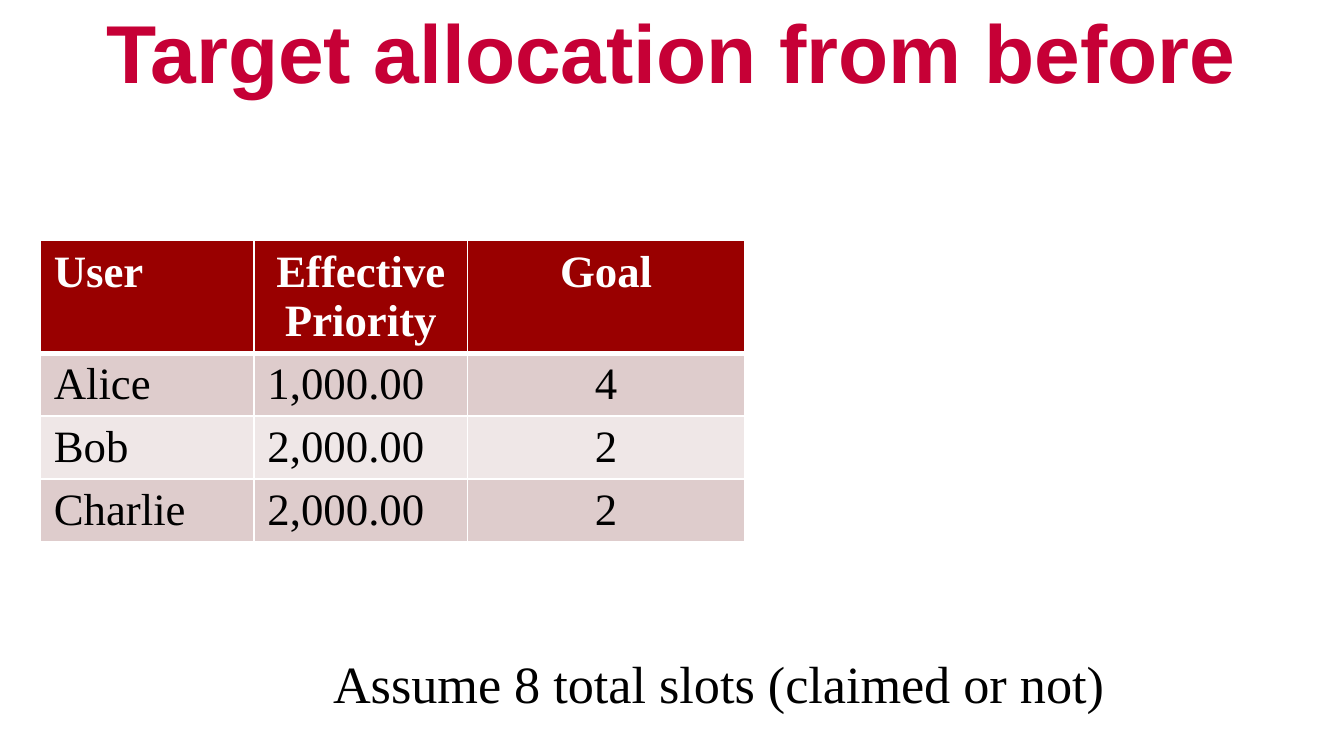
from dataclasses import dataclass

from lxml import etree
from pptx import Presentation
from pptx import util as u
from pptx.dml.color import RGBColor
from pptx.enum import text as t
from pptx.oxml import ns


@dataclass(frozen=True)
class Theme:
    heading_font: str = "Arial"
    body_font: str = "Times New Roman"
    heading: str = "C60036"
    ink: str = "000000"
    white: str = "FFFFFF"
    header_fill: str = "990000"
    bands: tuple = ("DECCCC", "EFE7E7")
    title_size: int = 44
    note_size: int = 28
    table_size: int = 24
    rule: int = 1
    header_rule: int = 3


LEFT, CENTER = t.PP_ALIGN.LEFT, t.PP_ALIGN.CENTER


def write(frame, content, *, font, size, color, bold=False, align=LEFT):
    """Fill a text frame, one paragraph per line of content."""
    for i, line in enumerate(content.split("\n")):
        paragraph = frame.add_paragraph() if i else frame.paragraphs[0]
        paragraph.alignment = align
        run = paragraph.add_run()
        run.text = line
        run.font.name, run.font.size, run.font.bold = font, u.Pt(size), bold
        run.font.color.rgb = RGBColor.from_string(color)


class SlideBuilder:
    def __init__(self, slide, theme):
        self.slide, self.theme = slide, theme

    def title(self, content, left, top, width, height):
        heading = self.slide.shapes.title
        heading.left, heading.top = u.Inches(left), u.Inches(top)
        heading.width, heading.height = u.Inches(width), u.Inches(height)
        frame = heading.text_frame
        frame.word_wrap = True
        frame.auto_size = t.MSO_AUTO_SIZE.NONE
        frame.vertical_anchor = t.MSO_ANCHOR.MIDDLE
        write(frame, content, font=self.theme.heading_font, size=self.theme.title_size,
              color=self.theme.heading, bold=True, align=CENTER)

    def note(self, content, left, top, width, height):
        box = self.slide.shapes.add_textbox(*map(u.Inches, (left, top, width, height)))
        box.text_frame.word_wrap = True
        box.text_frame.auto_size = t.MSO_AUTO_SIZE.SHAPE_TO_FIT_TEXT
        write(box.text_frame, content, font=self.theme.body_font,
              size=self.theme.note_size, color=self.theme.ink)

    def borders(self, cell, **widths):
        properties = cell._tc.get_or_add_tcPr()
        for side in "LRTB":
            width = u.Pt(widths.get(side, self.theme.rule))
            line = etree.SubElement(properties, ns.qn(f"a:ln{side}"), w=str(int(width)))
            fill = etree.SubElement(line, ns.qn("a:solidFill"))
            etree.SubElement(fill, ns.qn("a:srgbClr"), val=self.theme.white)

    def table(self, rows, left, top, widths, row_height, aligns):
        theme = self.theme
        table = self.slide.shapes.add_table(
            len(rows), len(widths), u.Inches(left), u.Inches(top),
            u.Inches(sum(widths)), u.Inches(row_height * len(rows))).table
        for column, width in zip(table.columns, widths):
            column.width = u.Inches(width)
        for r, values in enumerate(rows):
            # Rows grow from this minimum to fit their text
            table.rows[r].height = u.Inches(row_height)
            header = r == 0
            fill = theme.header_fill if header else theme.bands[(r - 1) % 2]
            # The heavier rule lies between the header and the first user
            edges = {0: {"B": theme.header_rule}, 1: {"T": theme.header_rule}}.get(r, {})
            for c, value in enumerate(values):
                cell = table.cell(r, c)
                self.borders(cell, **edges)
                cell.fill.solid()
                cell.fill.fore_color.rgb = RGBColor.from_string(fill)
                write(cell.text_frame, value, font=theme.body_font, size=theme.table_size,
                      color=theme.white if header else theme.ink, bold=header,
                      align=aligns[header][c])


def main():
    deck = Presentation()
    deck.slide_width = u.Inches(10)
    deck.slide_height = deck.slide_width * 9 // 16
    title_only = deck.slide_layouts[5]
    builder = SlideBuilder(deck.slides.add_slide(title_only), Theme())

    # Heading
    builder.title("Target allocation from before", 0, 0, 10, 0.75)

    # Slot goals per user
    allocation = [
        ("User", "Effective\nPriority", "Goal"),
        ("Alice", "1,000.00", "4"),
        ("Bob", "2,000.00", "2"),
        ("Charlie", "2,000.00", "2"),
    ]
    builder.table(allocation, 0.3, 1.79, widths=(1.59, 1.59, 2.06), row_height=0.41,
                  aligns={True: (LEFT, CENTER, CENTER), False: (LEFT, LEFT, CENTER)})

    # Assumption below the table
    builder.note("Assume 8 total slots (claimed or not)", 2.38, 4.8, 6.57, 0.57)

    deck.save("out.pptx")


if __name__ == "__main__":
    main()
